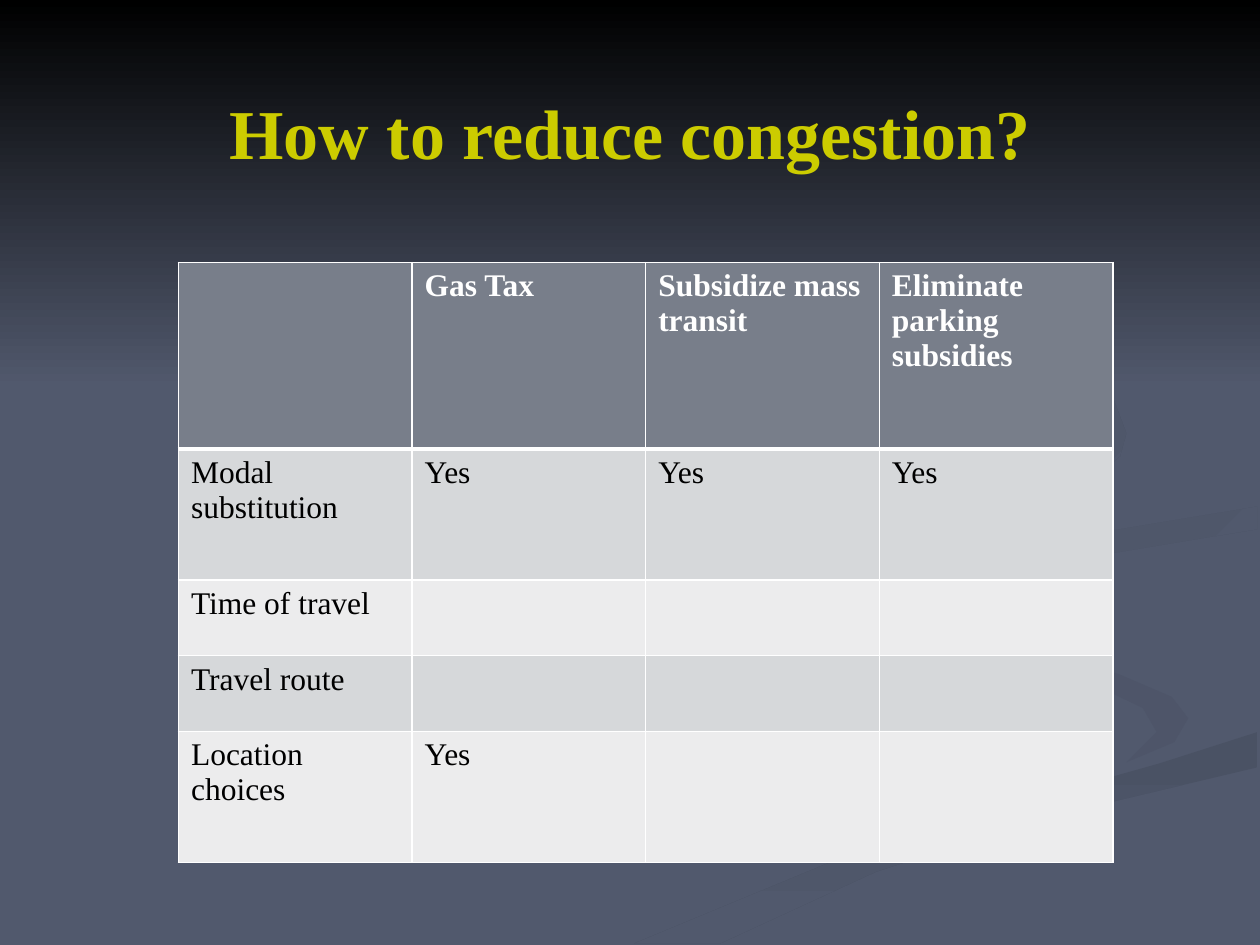
"""Build the slide on reducing congestion: swirl background, title and policy table."""
from pptx import Presentation
from pptx.dml.color import RGBColor
from pptx.enum.text import MSO_ANCHOR as Anchor, PP_ALIGN as Align
from pptx.oxml import parse_xml
from pptx.util import Inches, Pt

BASE = "51596D"
NS = "http://schemas.openxmlformats.org/drawingml/2006/main"


def color(code):
    return RGBColor.from_string(code)


def add_span(para, text, size, code, bold):
    span = para.add_run()
    span.text = text
    span.font.name = "Times New Roman"
    span.font.size = Pt(size)
    span.font.bold = bold
    span.font.color.rgb = color(code)


deck = Presentation()
deck.slide_width, deck.slide_height = Inches(10), Inches(7.5)
column = deck.slide_width / 120
row = deck.slide_height / 90
page = deck.slides.add_slide(deck.slide_layouts[6])
page.background.fill.solid()
page.background.fill.fore_color.rgb = color(BASE)

swirls = [
    (BASE, "4E5569", 0, [(575, 459), (602, 495), (781, 553), (800, 581), (564, 665),
                         (361, 749), (300, 749), (458, 674), (786, 566)]),
    (BASE, "4E5569", 45, [(724, 464), (758, 498), (888, 535), (930, 553), (943, 570),
                          (932, 589), (894, 605), (918, 581), (907, 562), (880, 549)]),
    ("4A5264", BASE, 90, [(503, 749), (571, 749), (695, 692), (821, 651), (998, 609),
                          (998, 581), (920, 606), (696, 669)]),
    ("4D5467", BASE, 45, [(781, 460), (826, 496), (805, 476), (859, 443), (998, 420),
                          (998, 402), (865, 424)]),
    ("4B5365", BASE, 45, [(577, 462), (622, 500), (593, 470), (855, 391), (889, 362),
                          (894, 344), (880, 307), (762, 233), (885, 320), (882, 354)]),
    ("000000", BASE, 90, [(0, 0), (0, 308), (1000, 308), (1000, 0)]),
]
for first, last, angle, points in swirls:
    builder = page.shapes.build_freeform(*points[0], scale=deck.slide_width / 1000)
    builder.add_line_segments(points[1:], close=True)
    shape = builder.convert_to_shape()
    shape.shadow.inherit = False
    shape.line.fill.background()
    shape.fill.gradient()
    shape.fill.gradient_angle = (360 - angle) % 360
    for stop, code in zip(shape.fill.gradient_stops, (first, last)):
        stop.color.rgb = color(code)

box = page.shapes.add_textbox(int(6 * column), int(5 * row), int(108 * column), int(15 * row))
box.text_frame.word_wrap = True
box.text_frame.vertical_anchor = Anchor.MIDDLE
para = box.text_frame.paragraphs[0]
para.alignment = Align.CENTER
add_span(para, "How to reduce congestion?", 40, "CCCC00", True)

entries = [
    ["", "Gas Tax", "Subsidize mass transit", "Eliminate parking subsidies"],
    ["Modal substitution", "Yes", "Yes", "Yes"],
    ["Time of travel", "", "", ""],
    ["Travel route", "", "", ""],
    ["Location choices", "Yes", "", ""],
]
heights = [17.75, 12.5, 7.2, 7.2, 12.5]
table = page.shapes.add_table(
    len(entries), len(entries[0]), int(17 * column), int(25 * row),
    int(89 * column), int(sum(heights) * row)).table
table.horz_banding = False
for table_column in table.columns:
    table_column.width = int(89 * column / len(entries[0]))
for r, (texts, height) in enumerate(zip(entries, heights)):
    table.rows[r].height = int(height * row)
    header = r == 0
    for c, text in enumerate(texts):
        cell = table.cell(r, c)
        properties = cell._tc.get_or_add_tcPr()
        for side in "LRTB":
            heavy = (header and side == "B") or (r == 1 and side == "T")
            properties.append(parse_xml(
                f'<a:ln{side} xmlns:a="{NS}" w="{Pt(3 if heavy else 1)}"><a:solidFill>'
                f'<a:srgbClr val="FFFFFF"/></a:solidFill></a:ln{side}>'))
        cell.fill.solid()
        cell.fill.fore_color.rgb = color("787E8A" if header else ("ECECED", "D6D8DA")[r % 2])
        if text:
            add_span(cell.text_frame.paragraphs[0], text, 18,
                     "FFFFFF" if header else "000000", header)

deck.save("out.pptx")
